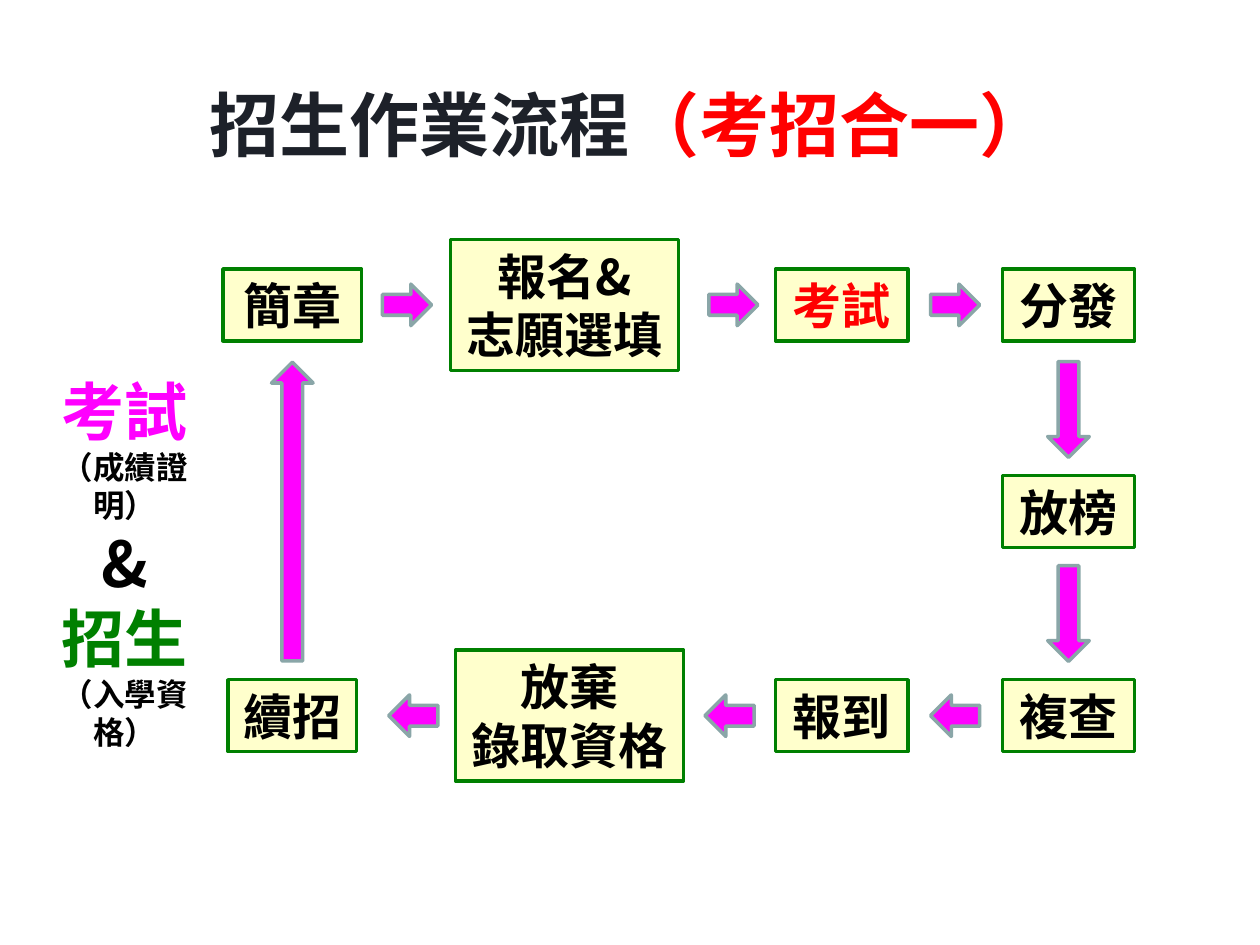
from pptx import Presentation
from pptx.dml.color import RGBColor
from pptx.enum import shapes, text
from pptx.oxml.ns import qn
from pptx.util import Inches, Pt
from lxml import etree

BLACK, RED, GREEN, MAGENTA = "000000", "FF0000", "008000", "FF00FF"


def color(value):
    return RGBColor.from_string(value)


class FlowSlide:
    """Holds the style of the flow chart and the slide it is drawn on."""

    font_name = "Noto Sans CJK SC"
    node_fill, node_line = "FFFFCC", GREEN
    arrow_fill, arrow_line = MAGENTA, "8AA6A8"
    arrow_width = 0.33

    def __init__(self, slide):
        self.slide = slide

    def style_run(self, run, size, ink):
        run.font.name = self.font_name
        run.font.size = Pt(size)
        run.font.bold = True
        run.font.color.rgb = color(ink)
        # East Asian glyphs take their typeface from a:ea
        latin = run.font._element.find(qn("a:latin"))
        east_asian = etree.Element(qn("a:ea"), typeface=self.font_name)
        latin.addnext(east_asian)

    def add_words(self, shape, paragraphs):
        """Fill a shape with paragraphs, each a list of (words, size, ink)."""
        frame = shape.text_frame
        frame.word_wrap = True
        frame.auto_size = text.MSO_AUTO_SIZE.SHAPE_TO_FIT_TEXT
        for index, parts in enumerate(paragraphs):
            paragraph = frame.paragraphs[0] if index == 0 else frame.add_paragraph()
            paragraph.alignment = text.PP_ALIGN.CENTER
            for words, size, ink in parts:
                run = paragraph.add_run()
                run.text = words
                self.style_run(run, size, ink)

    def label(self, left, top, width, height, paragraphs):
        box = self.slide.shapes.add_textbox(
            Inches(left), Inches(top), Inches(width), Inches(height))
        self.add_words(box, paragraphs)

    def block(self, kind, left, top, width, height, fill, line):
        shape = self.slide.shapes.add_shape(
            kind, Inches(left), Inches(top), Inches(width), Inches(height))
        shape.shadow.inherit = False
        shape.fill.solid()
        shape.fill.fore_color.rgb = color(fill)
        shape.line.color.rgb = color(line)
        shape.line.width = Pt(2)
        return shape

    def node(self, center_x, center_y, width, lines, ink=BLACK):
        height = 0.1 + 0.47 * len(lines)
        shape = self.block(
            shapes.MSO_SHAPE.RECTANGLE, center_x - width / 2, center_y - height / 2,
            width, height, self.node_fill, self.node_line)
        self.add_words(shape, [[(line, 28, ink)] for line in lines])

    def arrow(self, center_x, center_y, length=0.39, rotation=0):
        shape = self.block(
            shapes.MSO_SHAPE.RIGHT_ARROW, center_x - length / 2,
            center_y - self.arrow_width / 2, length, self.arrow_width,
            self.arrow_fill, self.arrow_line)
        shape.rotation = rotation


def main():
    deck = Presentation()
    deck.slide_width, deck.slide_height = Inches(10), Inches(7.5)
    flow = FlowSlide(deck.slides.add_slide(deck.slide_layouts[6]))

    flow.label(1.02, 0.6, 7.95, 0.77,
               [[("招生作業流程", 40, "1D2129"), ("（考招合一）", 40, RED)]])

    top_row, middle_row, bottom_row = 2.42, 4.06, 5.68
    first_x, exam_x, last_x = 2.32, 6.68, 8.48

    flow.node(first_x, top_row, 1.1, ["簡章"])
    flow.node(4.48, top_row, 1.81, ["報名&", "志願選填"])
    flow.node(exam_x, top_row, 1.05, ["考試"], RED)
    for row, step in ((top_row, "分發"), (middle_row, "放榜"), (bottom_row, "複查")):
        flow.node(last_x, row, 1.05, [step])
    flow.node(exam_x, bottom_row, 1.05, ["報到"])
    flow.node(4.52, bottom_row, 1.81, ["放棄", "錄取資格"])
    flow.node(first_x, bottom_row, 1.02, ["續招"])

    for x in (3.23, 5.82, 7.58):
        flow.arrow(x, top_row)
    for y in (3.25, 4.87):
        flow.arrow(last_x, y, length=0.76, rotation=90)
    for x in (7.58, 5.79, 3.28):
        flow.arrow(x, bottom_row, rotation=180)
    flow.arrow(first_x, 4.06, length=2.37, rotation=270)

    flow.label(0.17, 2.91, 1.64, 2.52, [
        [("考試", 36, MAGENTA)],
        [("（成績證明）", 18, BLACK)],
        [("&", 36, BLACK)],
        [("招生", 36, GREEN)],
        [("（入學資格）", 18, BLACK)],
    ])

    deck.save("out.pptx")


if __name__ == "__main__":
    main()
